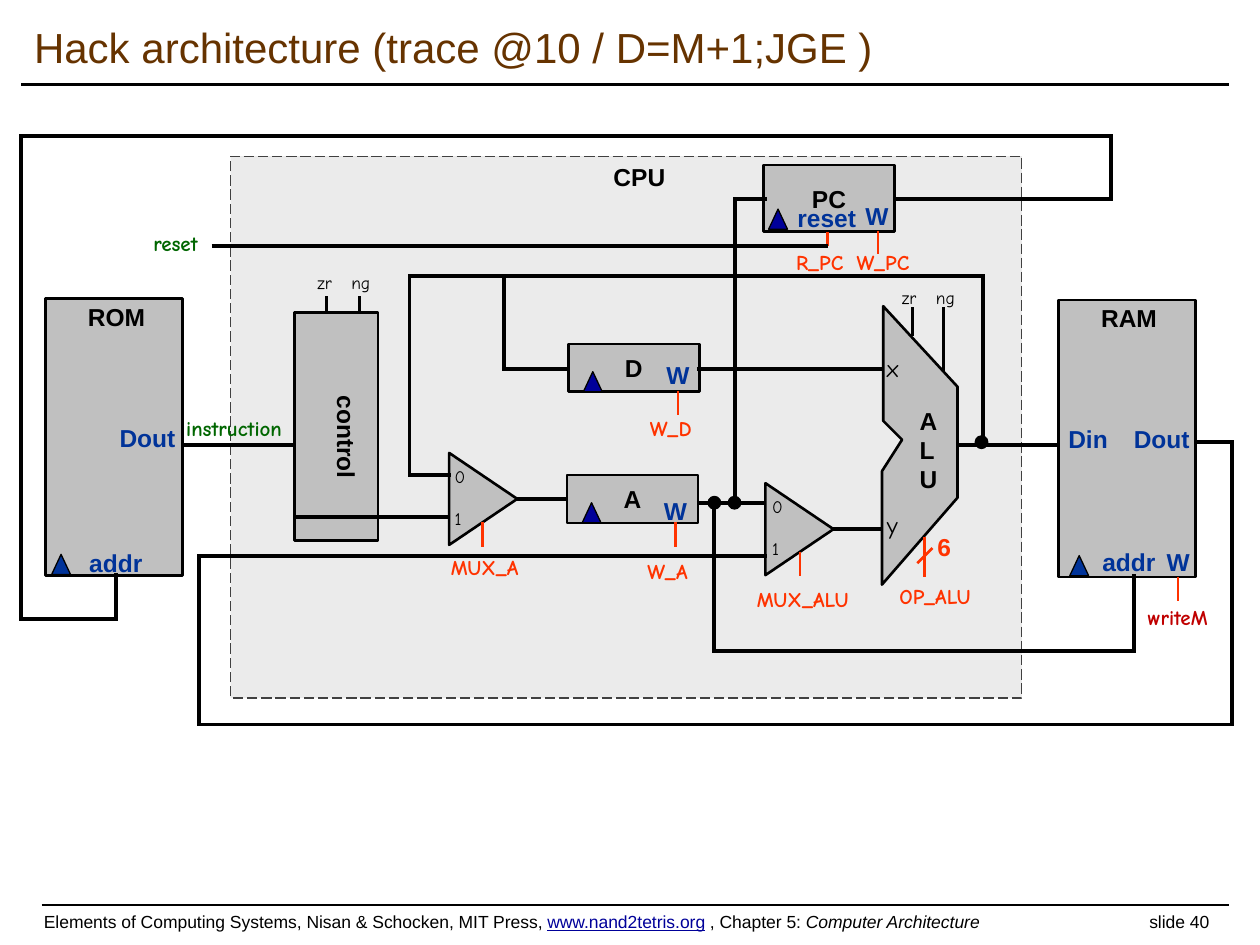
from dataclasses import dataclass
from itertools import pairwise

from lxml import etree
from pptx import Presentation
from pptx.dml.color import RGBColor
from pptx.enum.dml import MSO_LINE
from pptx.enum.shapes import MSO_CONNECTOR, MSO_SHAPE
from pptx.enum.text import MSO_ANCHOR, PP_ALIGN
from pptx.oxml.ns import qn
from pptx.util import Inches, Pt


@dataclass(frozen=True)
class Theme:
    black: str = "000000"
    brown: str = "663300"
    gray: str = "C0C0C0"
    cpu: str = "BFBFBF"
    dash: str = "404040"
    blue: str = "003399"
    navy: str = "000099"
    red: str = "FF3300"
    dark_red: str = "C00000"
    green: str = "006600"
    sans: str = "Arial"
    hand: str = "Comic Neue"
    title: int = 24
    large: int = 14
    signal: int = 12
    small: int = 10


theme = Theme()
rgb = RGBColor.from_string

deck = Presentation()
deck.slide_width, deck.slide_height = Inches(10), Inches(7.5)
page = deck.slides.add_slide(deck.slide_layouts[5])


def wire(points, color=theme.black, width=2.25):
    """Join the points with straight connectors."""
    for (x1, y1), (x2, y2) in pairwise(points):
        line = page.shapes.add_connector(
            MSO_CONNECTOR.STRAIGHT, Inches(x1), Inches(y1), Inches(x2), Inches(y2))
        line.line.color.rgb = rgb(color)
        line.line.width = Pt(width)
        line.line._get_or_add_ln().set("cap", "sq" if len(points) > 2 else "flat")
        etree.SubElement(line._element.spPr, qn("a:effectLst"))


def label(text, x, y, width, height, size, font, color, bold):
    """Add a text box with one paragraph per line of text."""
    box = page.shapes.add_textbox(Inches(x), Inches(y), Inches(width), Inches(height))
    frame = box.text_frame
    frame.word_wrap = False
    frame.text = text
    for para in frame.paragraphs:
        para.font.size, para.font.name = Pt(size), font
        para.font.color.rgb, para.font.bold = rgb(color), bold
    return box


# Title and rules
title = page.shapes.title
title.left, title.top = Inches(0.17), Inches(0.08)
title.width, title.height = Inches(9.58), Inches(0.58)
title.text_frame.text = "Hack architecture (trace @10 / D=M+1;JGE )"
title.text_frame.vertical_anchor = MSO_ANCHOR.MIDDLE
para = title.text_frame.paragraphs[0]
para.alignment = PP_ALIGN.LEFT
para.font.size, para.font.name = Pt(theme.title), theme.sans
para.font.color.rgb = rgb(theme.brown)
wire([(0.17, 0.67), (9.75, 0.67)], width=2)
wire([(0.33, 7.18), (9.75, 7.18)], width=1)

# Footer, with the slide number on a right tab
footer = label("", 0.25, 7.23, 9.5, 0.27, theme.small, theme.sans, theme.black, False)
footer.text_frame.word_wrap = True
footer.text_frame.margin_top = footer.text_frame.margin_bottom = 0
para = footer.text_frame.paragraphs[0]
tabs = etree.Element(qn("a:tabLst"))
etree.SubElement(tabs, qn("a:tab"), pos=str(Inches(9.25)), algn="r")
para._p.get_or_add_pPr().insert(0, tabs)
for text in ("Elements of Computing Systems, Nisan & Schocken, MIT Press, ",
             "www.nand2tetris.org", " , Chapter 5: ", "Computer Architecture",
             "\tslide 40"):
    span = para.add_run()
    span.text = text
    if text.startswith("www"):
        span.font.underline = True
        span.font.color.rgb = rgb(theme.navy)
    span.font.italic = text == "Computer Architecture"

# CPU frame, blocks, clock marks and multiplexers
RECT, TRIANGLE = MSO_SHAPE.RECTANGLE, MSO_SHAPE.ISOSCELES_TRIANGLE
blocks = [
    (RECT, 1.83, 1.24, 6.28, 4.3, theme.cpu, 0.75, ""),
    (RECT, 6.06, 1.31, 1.04, 0.53, theme.gray, 1.5, "PC"),
    (RECT, 8.4, 2.38, 1.09, 2.2, theme.gray, 1.5, ""),
    (RECT, 0.36, 2.37, 1.09, 2.2, theme.gray, 1.5, ""),
    (RECT, 4.5, 3.77, 1.04, 0.38, theme.gray, 1.5, "A"),
    (RECT, 4.51, 2.73, 1.04, 0.38, theme.gray, 1.5, "D"),
    (RECT, 2.34, 2.48, 0.66, 1.81, theme.gray, 1.5, ""),
]
blocks += [(TRIANGLE, x, y, 0.15, 0.16, color, 0.75, "") for x, y, color in (
    (6.1, 1.66, theme.navy), (8.49, 4.41, theme.blue), (0.41, 4.4, theme.blue),
    (4.62, 3.99, theme.navy), (4.63, 2.95, theme.navy))]
muxes = [(TRIANGLE, x, y, 0.73, 0.54, theme.gray, 1.5, "")
         for x, y in ((5.98, 3.93), (3.47, 3.69))]
for block in blocks + muxes:
    kind, x, y, width, height, fill, weight, name = block
    shape = page.shapes.add_shape(kind, Inches(x), Inches(y), Inches(width), Inches(height))
    shape.shadow.inherit = False
    shape.fill.solid()
    shape.fill.fore_color.rgb = rgb(fill)
    shape.line.color.rgb = rgb(theme.black)
    shape.line.width = Pt(weight)
    if block in muxes:
        shape.rotation = 90
    if fill == theme.cpu:
        shape.line.color.rgb = rgb(theme.dash)
        shape.line.dash_style = MSO_LINE.LONG_DASH
        tint = shape._element.spPr.find(qn("a:solidFill"))[0]
        etree.SubElement(tint, qn("a:alpha"), val="30000")
    if name:
        shape.text_frame.text = name
        shape.text_frame.word_wrap = False
        shape.text_frame.vertical_anchor = MSO_ANCHOR.MIDDLE
        para = shape.text_frame.paragraphs[0]
        para.alignment = PP_ALIGN.CENTER
        para.font.size, para.font.name = Pt(theme.large), theme.sans
        para.font.bold, para.font.color.rgb = True, rgb(theme.black)

# ALU outline
outline = page.shapes.build_freeform(Inches(7.01), Inches(2.43))
outline.add_line_segments([(Inches(x), Inches(y)) for x, y in (
    (7.01, 3.34), (7.16, 3.49), (7, 3.74), (7, 4.64), (7.6, 3.95), (7.6, 3.07))], close=True)
alu = outline.convert_to_shape()
alu.shadow.inherit = False
alu.fill.solid()
alu.fill.fore_color.rgb = rgb(theme.gray)
alu.line.color.rgb = rgb(theme.black)
alu.line.width = Pt(1.5)

# Control stubs and status stubs
for x, top, bottom in ((3.83, 4.14, 4.34), (5.36, 4.14, 4.34), (6.35, 4.38, 4.57),
                       (7.34, 4.26, 4.58), (9.35, 4.58, 4.77), (6.97, 1.83, 2.02),
                       (6.57, 1.84, 1.95), (5.38, 3.1, 3.29)):
    wire([(x, top), (x, bottom)], theme.red, 1.5)
wire([(7.4, 4.35), (7.28, 4.47)], theme.red, 1.5)
for x, top, bottom in ((7.24, 2.44, 2.67), (7.49, 2.44, 2.95),
                       (2.59, 2.35, 2.49), (2.85, 2.35, 2.49)):
    wire([(x, top), (x, bottom)], width=1.75)

# Data paths
for route in (
    [(7.6, 3.53), (8.41, 3.53)],
    [(6.6, 4.2), (7.01, 4.2)],
    [(5.53, 2.93), (7.02, 2.93)],
    [(5.53, 3.99), (6.07, 3.99)],
    [(7.8, 3.53), (7.8, 2.19), (3.25, 2.19), (3.25, 3.77), (3.56, 3.77)],
    [(4, 2.19), (4, 2.93), (4.51, 2.93)],
    [(2.34, 4.1), (3.56, 4.1)],
    [(4.09, 3.96), (4.5, 3.96)],
    [(9.5, 3.51), (9.78, 3.51), (9.78, 5.75), (1.58, 5.75), (1.58, 4.41), (6.07, 4.41)],
    [(5.83, 3.99), (5.83, 1.58), (6.07, 1.58)],
    [(7.1, 1.58), (8.82, 1.58), (8.82, 1.08), (0.17, 1.08), (0.17, 4.91), (0.92, 4.91),
     (0.92, 4.56)],
    [(5.67, 4), (5.67, 5.17), (9, 5.17), (9, 4.57)],
    [(1.68, 1.95), (6.57, 1.95)],
    [(1.45, 3.53), (2.34, 3.53)],
):
    wire(route)

# Junction dots
for x, y in ((7.74, 3.46), (5.78, 3.94), (5.62, 3.94)):
    dot = page.shapes.add_shape(MSO_SHAPE.OVAL, Inches(x), Inches(y), Inches(0.1), Inches(0.1))
    dot.shadow.inherit = False
    dot.fill.solid()
    dot.fill.fore_color.rgb = dot.line.color.rgb = rgb(theme.black)
    dot.line.width = Pt(0.75)

# Labels, grouped by style: size, font, colour, bold, box height
for style, items in (
    ((theme.large, theme.sans, theme.black, True, 0.34), (
        ("RAM", 8.64, 2.36, 0.65), ("ROM", 0.6, 2.35, 0.66), ("CPU", 4.77, 1.24, 0.62))),
    ((theme.large, theme.sans, theme.blue, True, 0.34), (
        ("W", 9.16, 4.29, 0.39), ("W", 5.17, 3.89, 0.39), ("W", 5.19, 2.81, 0.39),
        ("W", 6.77, 1.55, 0.39), ("Din", 8.38, 3.32, 0.52), ("Dout", 8.9, 3.32, 0.65),
        ("Dout", 0.85, 3.31, 0.65), ("addr", 8.65, 4.29, 0.63), ("addr", 0.61, 4.3, 0.63),
        ("reset", 6.23, 1.56, 0.67))),
    ((theme.large, theme.sans, theme.red, True, 0.34), (("6", 7.34, 4.17, 0.31),)),
    ((theme.large, theme.hand, theme.black, False, 0.34), (
        ("x", 6.94, 2.75, 0.32), ("y", 6.94, 4, 0.31))),
    ((theme.signal, theme.hand, theme.red, True, 0.3), (
        ("MUX_A", 3.48, 4.35, 0.83), ("W_A", 5.04, 4.38, 0.61), ("MUX_ALU", 5.91, 4.61, 1.04),
        ("OP_ALU", 7.04, 4.58, 0.87), ("W_PC", 6.7, 1.93, 0.68), ("R_PC", 6.22, 1.93, 0.61),
        ("W_D", 5.06, 3.25, 0.61))),
    ((theme.signal, theme.hand, theme.dark_red, True, 0.3), (("writeM", 9.01, 4.75, 0.77),)),
    ((theme.signal, theme.hand, theme.green, True, 0.3), (
        ("reset", 1.12, 1.78, 0.64), ("instruction", 1.38, 3.25, 1.06))),
    ((theme.small, theme.hand, theme.black, False, 0.27), (
        ("zr", 7.06, 2.23, 0.34), ("ng", 7.33, 2.23, 0.35),
        ("zr", 2.42, 2.11, 0.34), ("ng", 2.69, 2.11, 0.35))),
):
    size, font, color, bold, height = style
    for text, x, y, width in items:
        box = label(text, x, y, width, height, size, font, color, bold)
        box.text_frame.word_wrap = text == "ng"

# Stacked and vertical labels
label("A\nL\nU", 7.2, 3.17, 0.46, 1.76, theme.large, theme.sans, theme.black, True)
for x, y in ((6.03, 3.89), (3.51, 3.65)):
    inputs = label("0\n1", x, y, 0.29, 0.61, theme.small, theme.hand, theme.black, False)
    inputs.text_frame.paragraphs[1].space_before = Pt(12)
control = label("control", 2.48, 3.04, 0.44, 0.76, theme.large, theme.sans, theme.black, True)
control.text_frame._txBody.bodyPr.set("vert", "eaVert")

deck.save("out.pptx")
